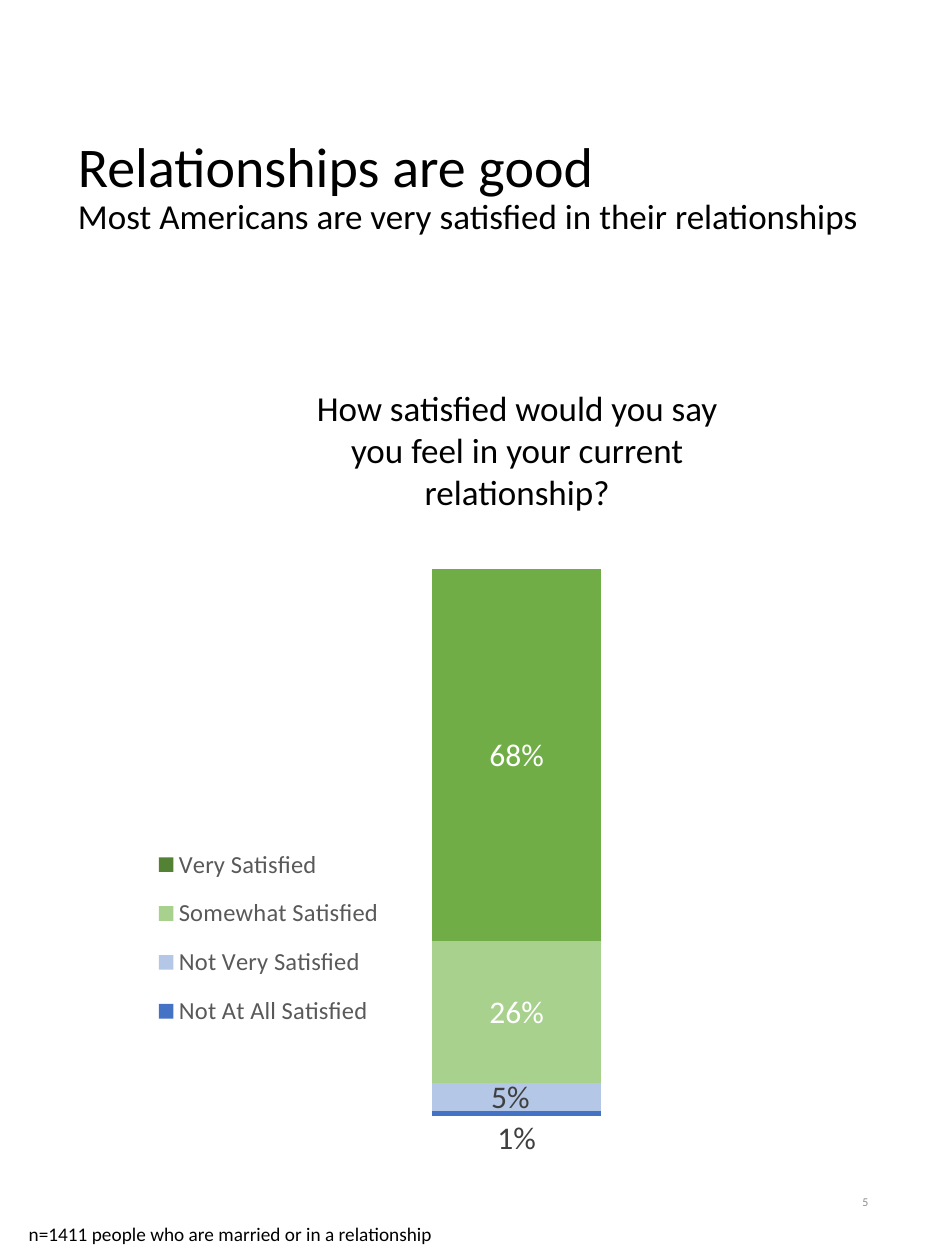
from lxml import etree
from pptx import Presentation
from pptx.chart.data import CategoryChartData
from pptx.dml.color import RGBColor
from pptx.enum import chart as ch, text as tx
from pptx.oxml.ns import qn
from pptx.util import Inches, Pt

THEME = {
    "font": "Calibri",
    "ink": "000000", "legend": "595959", "muted": "8C8C8C",
    "label_dark": "404040", "label_light": "FFFFFF",
    "title": 32, "body": 20, "label": 18, "legend_size": 14, "note": 11, "number": 6.8,
}

# box (left, top, width, height), lines of (text, size, colour), formats
TEXTS = [
    ((0.52, 0.53, 6.47, 1.93),
     [("Relationships are good", "title", "ink"),
      ("Most Americans are very satisfied in their relationships", "body", "ink")],
     {"vertical_anchor": tx.MSO_ANCHOR.MIDDLE}, {"line_spacing": 0.9}),
    ((0.13, 9.65, 7.13, 0.29),
     [("n=1411 people who are married or in a relationship", "note", "ink")], {}, {}),
    ((5.3, 9.27, 1.69, 0.53), [("5", "number", "muted")],
     {"vertical_anchor": tx.MSO_ANCHOR.MIDDLE}, {"alignment": tx.PP_ALIGN.RIGHT}),
    ((2.23, 3.02, 3.75, 1.11),
     [("How satisfied would you say you feel in your current relationship?", "body", "ink")],
     {}, {"alignment": tx.PP_ALIGN.CENTER}),
]

CHART_BOX = (0.93, 4.27, 5.01, 5)
PLOT_AREA = (0.298, 0.05, 0.67, 0.868)
LEGEND_AREA = (0.05, 0.465, 0.38, 0.34)
# name, share, series colour, bar colour, label colour, label shift (x, y)
SERIES = [
    ("Not At All Satisfied", 0.01, "4472C4", "4472C4", "label_dark", (0, 0.04)),
    ("Not Very Satisfied", 0.05, "B4C7E7", "B4C7E7", "label_dark", (-0.01, 0)),
    ("Somewhat Satisfied", 0.26, "A9D18E", "A9D18E", "label_light", None),
    ("Very Satisfied", 0.68, "548235", "70AD47", "label_light", None),
]


def apply(target, formats):
    for name, value in formats.items():
        setattr(target, name, value)


def style_font(font, size, colour):
    apply(font, {"name": THEME["font"], "size": Pt(THEME[size])})
    font.color.rgb = RGBColor.from_string(THEME[colour])


def fill(part, colour):
    part.format.fill.solid()
    part.format.fill.fore_color.rgb = RGBColor.from_string(colour)


def manual_layout(values, target=None):
    """Return a c:layout; four values place an area, two shift a label."""
    layout = etree.Element(qn("c:layout"))
    manual = etree.SubElement(layout, qn("c:manualLayout"))
    settings = [("layoutTarget", target)] if target else []
    if len(values) == 4:
        settings += [("xMode", "edge"), ("yMode", "edge")]
    settings += zip("xywh", values)
    for name, value in settings:
        etree.SubElement(manual, qn("c:" + name)).set("val", str(value))
    return layout


def set_layout(parent, layout, after=None):
    for old in parent.findall(qn("c:layout")):
        parent.remove(old)
    position = 0 if after is None else parent.index(parent.find(qn(after))) + 1
    parent.insert(position, layout)


def add_text(slide, box, lines, frame_format, paragraph_format):
    frame = slide.shapes.add_textbox(*map(Inches, box)).text_frame
    apply(frame, {"word_wrap": True, **frame_format})
    paragraph = frame.paragraphs[0]
    apply(paragraph, paragraph_format)
    for index, (words, size, colour) in enumerate(lines):
        if index:
            paragraph.add_line_break()
        run = paragraph.add_run()
        run.text = words
        style_font(run.font, size, colour)


def style_series(series, series_colour, bar_colour, label_colour, shift):
    fill(series, series_colour)
    if bar_colour != series_colour:
        fill(series.points[0], bar_colour)
    labels = series.data_labels
    apply(labels, {"show_value": True, "number_format": "0%",
                   "number_format_is_linked": False})
    style_font(labels.font, "label", label_colour)
    if shift:
        label = series.points[0].data_label
        style_font(label.font, "label", label_colour)
        label.position = ch.XL_LABEL_POSITION.CENTER
        element = labels._element.find(qn("c:dLbl"))
        set_layout(element, manual_layout(shift), after="c:idx")


def add_satisfaction_chart(slide):
    data = CategoryChartData(number_format="0%")
    data.categories = ["1"]
    for name, share, *_ in SERIES:
        data.add_series(name, [share])
    chart = slide.shapes.add_chart(
        ch.XL_CHART_TYPE.COLUMN_STACKED_100, *map(Inches, CHART_BOX), data).chart
    apply(chart, {"has_title": False, "has_legend": True})
    apply(chart.font, {"name": THEME["font"], "size": Pt(10)})
    apply(chart.plots[0], {"gap_width": 150, "overlap": 100, "vary_by_categories": False})
    for axis in (chart.category_axis, chart.value_axis):
        apply(axis, {"visible": False, "has_major_gridlines": False})
    apply(chart.legend, {"position": ch.XL_LEGEND_POSITION.LEFT, "include_in_layout": False})
    style_font(chart.legend.font, "legend_size", "legend")
    set_layout(chart.legend._element, manual_layout(LEGEND_AREA), after="c:legendPos")
    plot_area = chart._chartSpace.chart.plotArea
    set_layout(plot_area, manual_layout(PLOT_AREA, "inner"))
    for series, (_, _, *look) in zip(chart.plots[0].series, SERIES):
        style_series(series, *look)


def main():
    presentation = Presentation()
    apply(presentation, {"slide_width": Inches(7.5), "slide_height": Inches(10)})
    slide = presentation.slides.add_slide(presentation.slide_layouts[6])
    add_satisfaction_chart(slide)
    for item in TEXTS:
        add_text(slide, *item)
    presentation.save("out.pptx")


if __name__ == "__main__":
    main()
